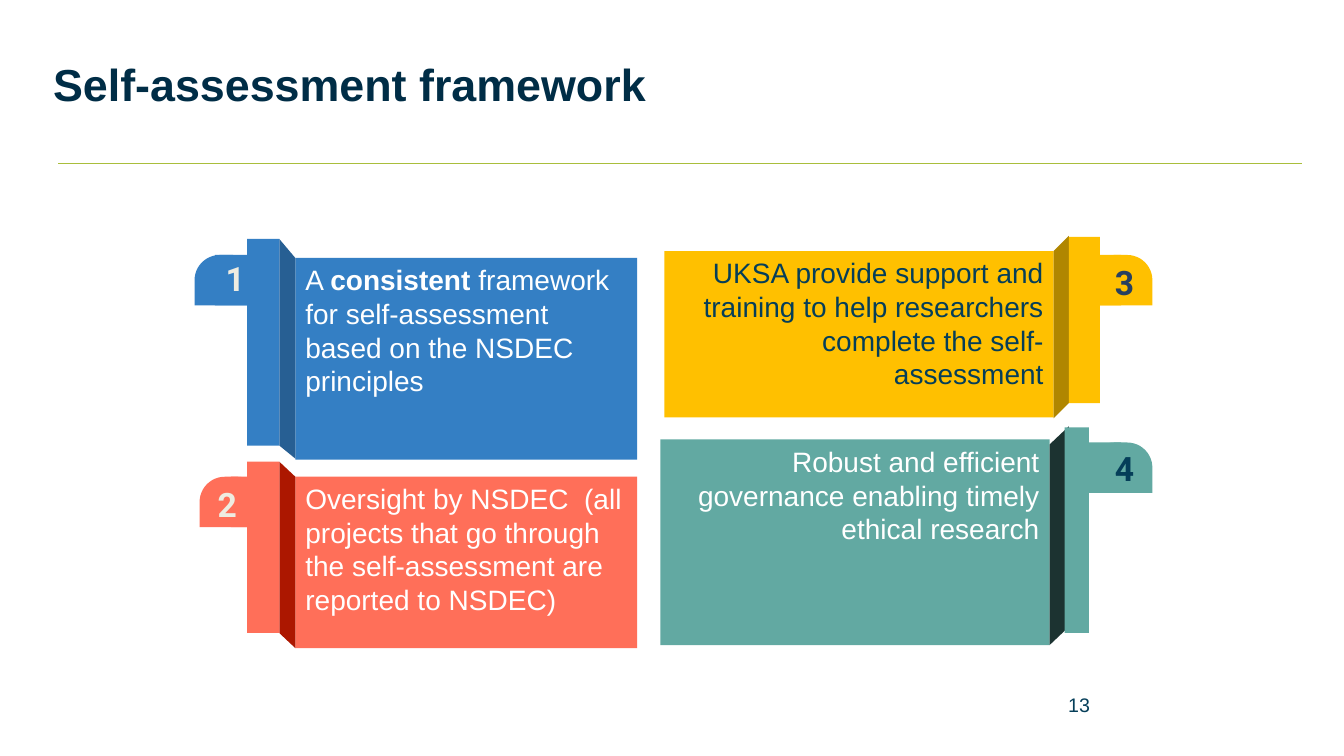
from dataclasses import dataclass

from lxml.etree import SubElement
from pptx import Presentation
from pptx.dml.color import RGBColor
from pptx.enum.shapes import MSO_CONNECTOR, MSO_SHAPE
from pptx.enum.text import MSO_ANCHOR, PP_ALIGN
from pptx.oxml.ns import qn
from pptx.util import Inches, Pt


@dataclass(frozen=True)
class Theme:
    heading: str = "002D46"
    ink: str = "053E59"
    slate: str = "274060"
    white: str = "FFFFFF"
    cream: str = "EEECE1"
    rule: str = "A9BE3B"
    blue: str = "347FC4"
    blue_fold: str = "275F93"
    coral: str = "FF6F59"
    coral_fold: str = "AC1700"
    amber: str = "FFC000"
    amber_fold: str = "B08600"
    teal: str = "62A9A2"
    teal_fold: str = "1C3331"
    body_font: str = "Arial"
    number_font: str = "Roboto"
    title_size: int = 32
    number_size: int = 24
    body_size: int = 20
    page_size: int = 14


@dataclass(frozen=True)
class Card:
    number: str
    number_at: tuple
    number_color: str
    runs: tuple  # (text, bold) pairs
    ink: str
    fill: str
    fold_fill: str
    body: tuple
    fold: tuple  # corner points
    strip: tuple
    tab: tuple
    tab_base: tuple  # left and top of the square half of the tab
    align: PP_ALIGN


class SlideBuilder:
    def __init__(self, slide, theme):
        self.shapes = slide.shapes
        self.theme = theme

    def paint(self, shape, fill):
        shape.shadow.inherit = False
        shape.fill.solid()
        shape.fill.fore_color.rgb = RGBColor.from_string(fill)
        shape.line.fill.background()
        return shape

    def block(self, box, fill, kind=MSO_SHAPE.RECTANGLE):
        return self.paint(self.shapes.add_shape(kind, *map(Inches, box)), fill)

    def polygon(self, points, fill):
        start, *rest = [(Inches(x), Inches(y)) for x, y in points]
        builder = self.shapes.build_freeform(*start)
        builder.add_line_segments(rest, close=True)
        return self.paint(builder.convert_to_shape(), fill)

    def rule(self, start, end):
        line = self.shapes.add_connector(
            MSO_CONNECTOR.STRAIGHT, *map(Inches, start + end))
        line.line.color.rgb = RGBColor.from_string(self.theme.rule)
        line.line.width = Pt(0.75)
        SubElement(line._element.spPr, qn("a:effectLst"))

    def set_text(self, shape, runs, size, color, font=None, bold=None,
                 align=PP_ALIGN.LEFT, anchor=MSO_ANCHOR.TOP):
        """Fill a shape with one paragraph made of (text, bold) runs."""
        frame = shape.text_frame
        frame.word_wrap = True
        frame.vertical_anchor = anchor
        paragraph = frame.paragraphs[0]
        paragraph.alignment = align
        paragraph.font.size = Pt(size)
        paragraph.font.name = font or self.theme.body_font
        paragraph.font.bold = bold
        paragraph.font.color.rgb = RGBColor.from_string(color)
        for text, strong in runs:
            run = paragraph.add_run()
            run.text = text
            if strong:
                run.font.bold = True

    def label(self, box, text, size, color, **style):
        textbox = self.shapes.add_textbox(*map(Inches, box))
        self.set_text(textbox, [(text, False)], size, color, **style)

    def card(self, card):
        """Draw a panel with its folded edge, side strip and numbered tab."""
        theme = self.theme
        panel = self.block(card.body, card.fill)
        self.set_text(panel, card.runs, theme.body_size, card.ink,
                      align=card.align)
        self.polygon(card.fold, card.fold_fill)
        self.block(card.strip, card.fill)
        tab = self.block(card.tab + (0.63, 0.5), card.fill,
                         MSO_SHAPE.ROUND_2_SAME_RECTANGLE)
        tab.adjustments[0] = 0.5
        tab.adjustments[1] = 0
        self.block(card.tab_base + (0.32, 0.5), card.fill)
        self.label(card.number_at + (0.63, 0.5), card.number,
                   theme.number_size, card.number_color,
                   font=theme.number_font, bold=True)


def make_cards(theme):
    return [
        Card("1", (2.14, 2.51), theme.cream,
             (("A ", False), ("consistent", True),
              (" framework for self-assessment based on the NSDEC principles",
               False)),
             theme.white, theme.blue, theme.blue_fold,
             body=(2.93, 2.56, 3.39, 2),
             fold=((2.77, 2.37), (2.93, 2.56), (2.93, 4.55), (2.77, 4.42)),
             strip=(2.45, 2.37, 0.32, 2.05),
             tab=(1.93, 2.53), tab_base=(2.13, 2.53), align=PP_ALIGN.LEFT),
        Card("2", (2.06, 4.75), theme.cream,
             (("Oversight by NSDEC  (all projects that go through the "
               "self-assessment are reported to NSDEC)", False),),
             theme.white, theme.coral, theme.coral_fold,
             body=(2.93, 4.73, 3.39, 1.7),
             fold=((2.77, 4.58), (2.93, 4.73), (2.93, 6.43), (2.77, 6.28)),
             strip=(2.45, 4.58, 0.32, 1.7),
             tab=(1.98, 4.73), tab_base=(2.29, 4.73), align=PP_ALIGN.LEFT),
        Card("3", (10.96, 2.55), theme.slate,
             (("UKSA provide support and training to help researchers "
               "complete the self-assessment", False),),
             theme.ink, theme.amber, theme.amber_fold,
             body=(6.59, 2.49, 3.86, 1.65),
             fold=((10.6, 2.34), (10.45, 2.49), (10.45, 4.15), (10.6, 4)),
             strip=(10.6, 2.35, 0.31, 1.65),
             tab=(10.8, 2.53), tab_base=(10.8, 2.53), align=PP_ALIGN.RIGHT),
        Card("4", (10.96, 4.39), theme.ink,
             (("Robust and efficient governance enabling timely ethical "
               "research", False),),
             theme.white, theme.teal, theme.teal_fold,
             body=(6.55, 4.36, 3.86, 2.04),
             fold=((10.6, 4.23), (10.41, 4.41), (10.41, 6.4), (10.6, 6.22)),
             strip=(10.56, 4.24, 0.24, 2.04),
             tab=(10.8, 4.39), tab_base=(10.8, 4.39), align=PP_ALIGN.RIGHT),
    ]


def main():
    theme = Theme()
    presentation = Presentation()
    presentation.slide_width = Inches(13.33)
    presentation.slide_height = Inches(7.5)
    slide = presentation.slides.add_slide(presentation.slide_layouts[6])
    builder = SlideBuilder(slide, theme)

    builder.rule((0.58, 1.62), (12.91, 1.62))
    builder.label((-0.78, 0.2, 8.5, 1.25), "Self-assessment framework",
                  theme.title_size, theme.heading, bold=True,
                  align=PP_ALIGN.CENTER, anchor=MSO_ANCHOR.MIDDLE)
    for card in make_cards(theme):
        builder.card(card)
    builder.label((8.83, 6.83, 2.08, 0.5), "13", theme.page_size, theme.ink,
                  align=PP_ALIGN.RIGHT)
    presentation.save("out.pptx")


if __name__ == "__main__":
    main()
